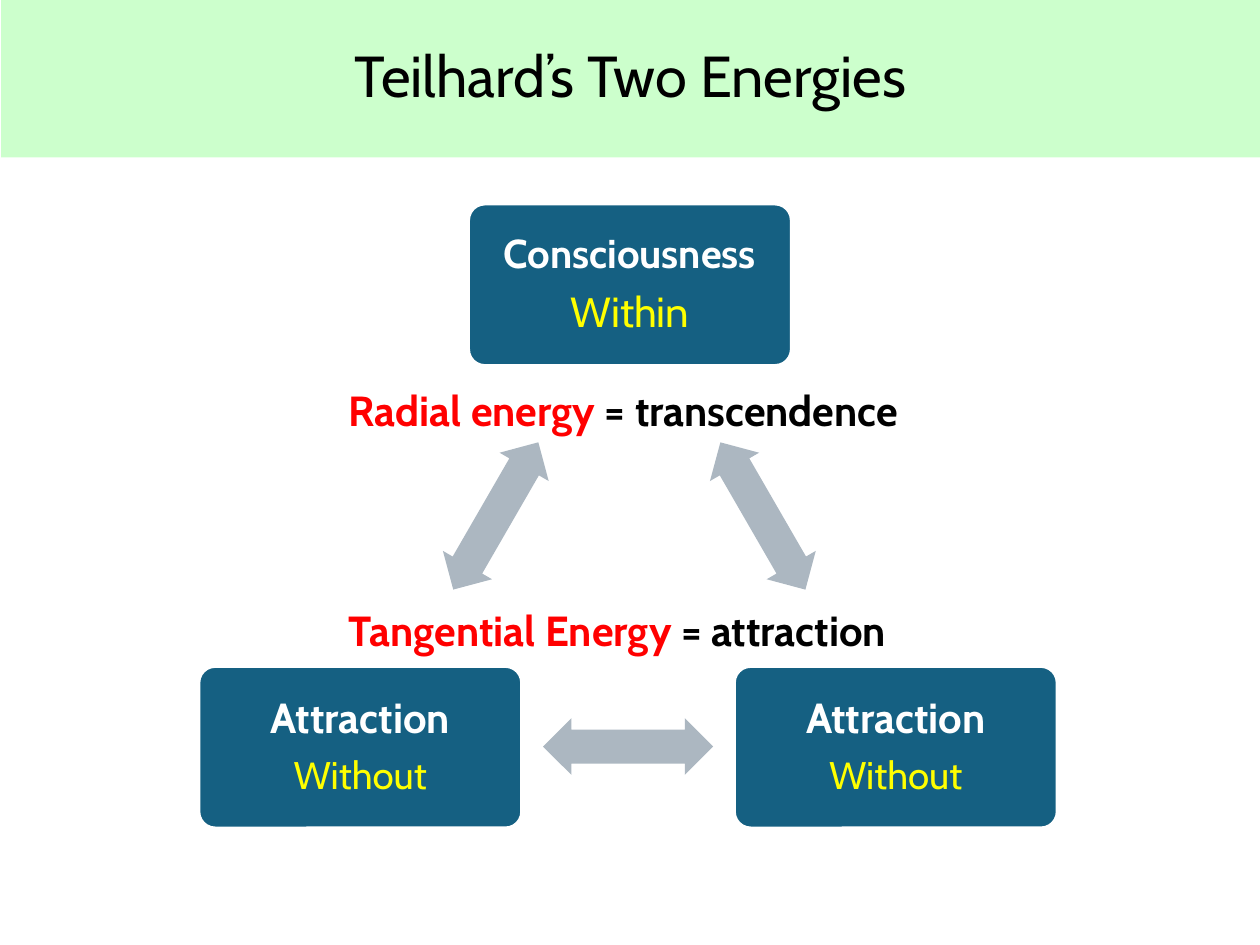
import pptx
import pptx.dml.color
import pptx.enum.shapes
import pptx.enum.text
import pptx.util
from pptx.util import Inches

FONT = "Cabin"
SHAPES = pptx.enum.shapes.MSO_SHAPE
MIDDLE = pptx.enum.text.MSO_ANCHOR.MIDDLE
CENTER = pptx.enum.text.PP_ALIGN.CENTER
BOX_WIDTH, BOX_HEIGHT = 2.56, 1.28
ARROW_WIDTH, ARROW_HEIGHT = 1.35, 0.45


def color(value):
    return pptx.dml.color.RGBColor.from_string(value)


def style_font(font, size, value, bold=False):
    font.name = FONT
    font.size = pptx.util.Pt(size)
    font.bold = bold
    font.color.rgb = color(value)


def add_filled_shape(page, kind, left, top, width, height, fill):
    shape = page.shapes.add_shape(
        kind, Inches(left), Inches(top), Inches(width), Inches(height))
    shape.shadow.inherit = False
    shape.fill.solid()
    shape.fill.fore_color.rgb = color(fill)
    shape.line.fill.background()
    return shape


def add_title(page, text, left, top, width, height):
    title = page.shapes.title
    title.left, title.top = Inches(left), Inches(top)
    title.width, title.height = Inches(width), Inches(height)
    title.fill.solid()
    title.fill.fore_color.rgb = color("CCFFCC")
    frame = title.text_frame
    frame.text = text
    frame.vertical_anchor = MIDDLE
    para = frame.paragraphs[0]
    para.alignment = CENTER
    para.line_spacing = 0.9
    style_font(para.font, 33, "000000")


def add_concept(page, left, top, name, name_size, side, side_size):
    """Add a rounded box with a bold name above its side of things."""
    box = add_filled_shape(page, SHAPES.ROUNDED_RECTANGLE, left, top,
                           BOX_WIDTH, BOX_HEIGHT, "156082")
    box.adjustments[0] = 0.1
    box.line.color.rgb = color("FFFFFF")
    box.line.width = pptx.util.Pt(1.5)
    frame = box.text_frame
    frame.word_wrap = True
    frame.vertical_anchor = MIDDLE
    lines = ((name, name_size, "FFFFFF", True), (side, side_size, "FFFF00", False))
    frame.text = "\n".join(line[0] for line in lines)
    for para, (_, size, value, bold) in zip(frame.paragraphs, lines):
        para.alignment = CENTER
        para.line_spacing = 0.9
        para.space_after = pptx.util.Pt(8)
        style_font(para.font, size, value, bold)


def add_double_arrow(page, left, top, rotation):
    arrow = add_filled_shape(page, SHAPES.LEFT_RIGHT_ARROW, left, top,
                             ARROW_WIDTH, ARROW_HEIGHT, "ACB7C1")
    arrow.adjustments[0] = 0.6
    arrow.adjustments[1] = 0.5
    arrow.rotation = rotation


def add_energy_label(page, left, top, width, energy, meaning):
    label = page.shapes.add_textbox(
        Inches(left), Inches(top), Inches(width), Inches(0.5))
    label.text_frame.word_wrap = True
    para = label.text_frame.paragraphs[0]
    for text, value in ((energy, "FF0000"), (f" = {meaning}", "000000")):
        span = para.add_run()
        span.text = text
        style_font(span.font, 24, value, True)


def add_energy_triangle(page, left, top):
    """Add three boxes joined by arrows, from the triangle's top left corner."""
    base = top + 3.67
    add_concept(page, left + 2.14, top, "Consciousness", 23, "Within", 24)
    for offset in (0, 4.25):
        add_concept(page, left + offset, base, "Attraction", 24, "Without", 22)
    for across, down, rotation in ((3.8, 2.25, 60), (2.73, 4.08, 180), (1.68, 2.25, 300)):
        add_double_arrow(page, left + across, top + down, rotation)
    add_energy_label(page, left + 1.09, top + 3.13, 6.42, "Tangential Energy", "attraction")
    add_energy_label(page, left + 1.09, top + 1.38, 5.37, "Radial energy", "transcendence")


def main():
    deck = pptx.Presentation()
    deck.slide_width, deck.slide_height = Inches(10), Inches(7.5)
    page = deck.slides.add_slide(deck.slide_layouts[5])
    add_title(page, "Teilhard’s Two Energies", 0.01, 0, 9.99, 1.25)
    add_energy_triangle(page, 1.58, 1.62)
    deck.save("out.pptx")


if __name__ == "__main__":
    main()
